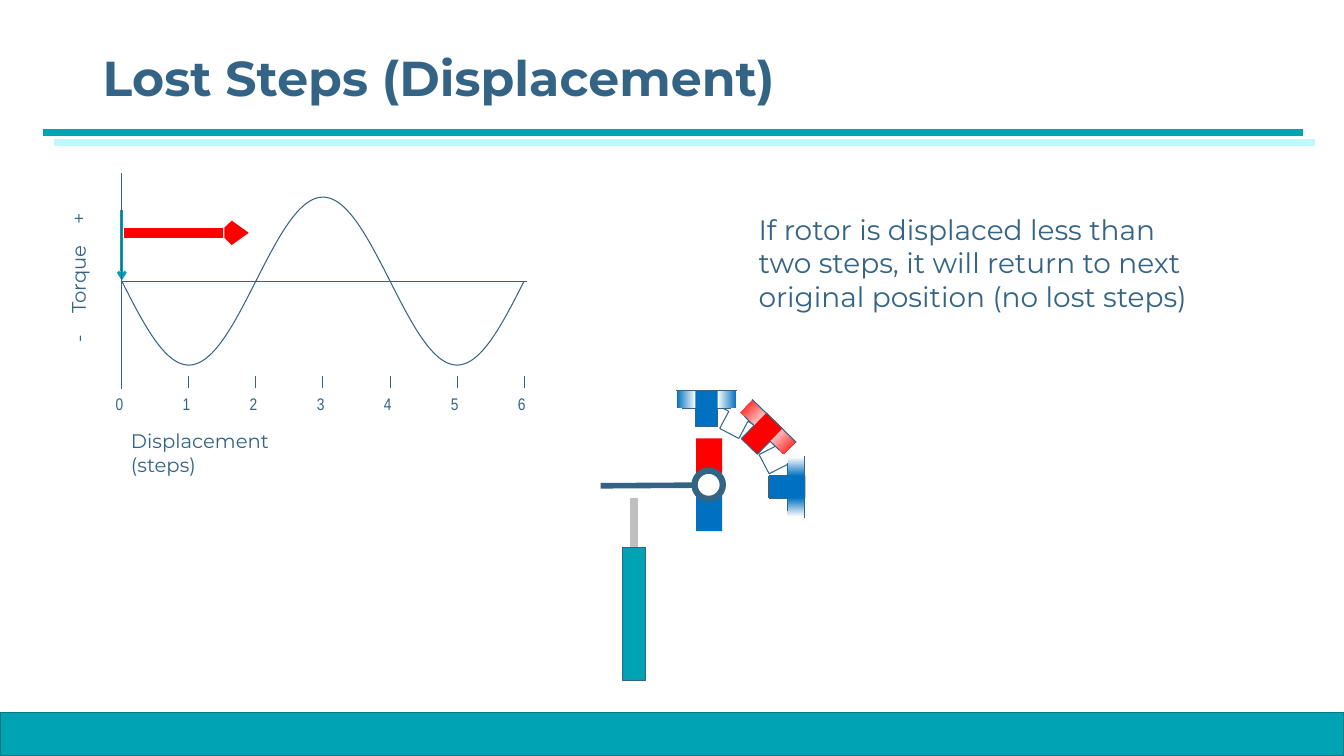
from itertools import pairwise
from math import cos, pi, radians, sin

from lxml.etree import SubElement
from pptx import Presentation
from pptx.dml.color import RGBColor
from pptx.enum.shapes import MSO_CONNECTOR, MSO_SHAPE
from pptx.enum.text import MSO_ANCHOR, MSO_AUTO_SIZE, PP_ALIGN
from pptx.oxml.ns import qn
from pptx.util import Pt

COLORS = {
    "ink": "346485", "teal": "00A3B3", "teal_edge": "007984", "aqua": "BDF9FF",
    "red": "FF0000", "blue": "0070C0", "gray": "BFBFBF", "white": "FFFFFF",
}


def rgb(name):
    """Return the named colour."""
    return RGBColor.from_string(COLORS[name])


def add_line(slide, start, end, color="ink", width=0.75, head=None, shadow=None):
    """Draw a straight line, with an arrowhead size or a shadow on request."""
    line = slide.shapes.add_connector(
        MSO_CONNECTOR.STRAIGHT, *[Pt(value) for value in (*start, *end)])
    line.line.color.rgb = rgb(color)
    line.line.width = Pt(width)
    if head:
        SubElement(line.line._get_or_add_ln(), qn("a:tailEnd"),
                   type="arrow", w=head, len=head)
    effects = SubElement(line._element.spPr, qn("a:effectLst"))
    if shadow:
        cast = SubElement(effects, qn("a:outerShdw"), dist=str(Pt(11)),
                          dir=str(40 * 60000), algn="tl", rotWithShape="0")
        SubElement(cast, qn("a:srgbClr"), val=COLORS[shadow])


def add_block(slide, left, top, width, height, fill, edge=None, edge_width=0.75,
              kind=MSO_SHAPE.RECTANGLE):
    """Draw a filled shape, without an outline unless one is named."""
    block = slide.shapes.add_shape(kind, Pt(left), Pt(top), Pt(width), Pt(height))
    block.shadow.inherit = False
    block.fill.solid()
    block.fill.fore_color.rgb = rgb(fill)
    if edge:
        block.line.color.rgb = rgb(edge)
        block.line.width = Pt(edge_width)
    else:
        block.line.fill.background()
    return block


def add_label(slide, text, left, top, width, height, size, font="Montserrat",
              align=PP_ALIGN.LEFT, anchor=MSO_ANCHOR.TOP, indent=0):
    """Write one paragraph of text in a box."""
    label = slide.shapes.add_textbox(Pt(left), Pt(top), Pt(width), Pt(height))
    frame = label.text_frame
    frame.word_wrap = True
    frame.vertical_anchor = anchor
    frame.margin_left = frame.margin_right = Pt(3.6)
    frame.margin_top = frame.margin_bottom = Pt(3.6)
    paragraph = frame.paragraphs[0]
    paragraph.text = text
    paragraph.alignment = align
    properties = paragraph._p.get_or_add_pPr()
    properties.set("marL", str(Pt(indent)))
    properties.set("indent", "0")
    paragraph.font.size = Pt(size)
    paragraph.font.name = font
    paragraph.font.color.rgb = rgb("ink")
    return label


def add_heading(slide, left, top, width, height):
    """Place the title and the shadowed rule below it."""
    title = slide.shapes.title
    title.left, title.top, title.width, title.height = map(Pt, (left, top, width, height))
    frame = title.text_frame
    frame.text = "Lost Steps (Displacement)"
    frame.vertical_anchor = MSO_ANCHOR.MIDDLE
    frame.auto_size = MSO_AUTO_SIZE.NONE
    paragraph = frame.paragraphs[0]
    paragraph.alignment = PP_ALIGN.LEFT
    paragraph.line_spacing = 0.9
    paragraph.font.size = Pt(35)
    paragraph.font.bold = True
    paragraph.font.name = "Montserrat"
    paragraph.font.color.rgb = rgb("ink")
    rule = top + height + 7.5
    add_line(slide, (left - 35.7, rule), (left + width + 36.7, rule), "teal", 5, shadow="aqua")


def add_torque_curve(slide, left, top, step, height):
    """Draw torque against displacement, with axes, ticks and arrows."""
    zero = top + height / 2
    amplitude = 60
    add_line(slide, (left + 1.5, zero - 34.5), (left + 90.7, zero - 34.5), "red", 7, "sm")
    add_line(slide, (left, zero - 51), (left, zero - 0.5), "teal", 2, "med")
    add_line(slide, (left, zero), (left + 6 * step + 2, zero))
    add_line(slide, (left, top), (left, top + height))
    for count in range(7):
        tick = left + count * step
        if count:
            add_line(slide, (tick, zero + 68), (tick, zero + 76.7))
        add_label(slide, str(count), tick - 10.2, zero + 77, 17, 22, 12,
                  "Arial Narrow", PP_ALIGN.CENTER)
    units = 100
    points = [(units * (left + index * step / 20),
               units * (zero + amplitude * sin(pi * index / 40))) for index in range(121)]
    builder = slide.shapes.build_freeform(*points[0], scale=Pt(1) / units)
    builder.add_line_segments(points[1:], close=False)
    curve = builder.convert_to_shape()
    curve.shadow.inherit = False
    curve.fill.background()
    curve.line.color.rgb = rgb("ink")
    curve.line.width = Pt(0.75)
    for mark, offset in (("-", 41), ("Torque", -1), ("+", -44.6)):
        torque = add_label(slide, mark, left - 66, zero + offset - 12.2, 70, 24.4, 14,
                           align=PP_ALIGN.CENTER)
        torque.rotation = 270
    add_label(slide, "Displacement (steps)", left + 3, zero + 102.2, 130, 42, 14)


def add_pole(slide, x, y, angle, color, fade_inward):
    """Draw a stator pole around its centre, turned by the angle."""
    turn = radians(angle)

    def place(across, along):
        """Turn a point of the pole and move it to the centre."""
        return (x + across * cos(turn) - along * sin(turn),
                y + across * sin(turn) + along * cos(turn))

    def add_part(across, along, width, height, rotation):
        """Draw one block of the pole around its own centre."""
        middle_x, middle_y = place(across, along)
        part = add_block(slide, middle_x - width / 2, middle_y - height / 2,
                         width, height, color)
        part.rotation = rotation % 360
        return part

    for side in (-1, 1):
        facing = angle + (180 if (side < 0) != fade_inward else 0)
        wing = add_part(6.3, side * 14.5, 12.2, 13.7, facing)
        wing.fill.gradient()
        wing.fill.gradient_angle = 270
        for stop, shade in zip(wing.fill.gradient_stops, (color, "white")):
            stop.color.rgb = rgb(shade)
    add_part(0, 0, 26, 16, angle)
    for start, end in (((-13, -8), (-13, 8)), ((-13, -8), (0, -8)), ((-13, 8), (0, 8)),
                       ((0, 8), (0, 17.3)), ((0, -17.3), (0, -8)), ((12.5, -22), (12.5, 22))):
        add_line(slide, place(*start), place(*end))


def add_motor(slide, left, top):
    """Draw the rotor, its arm on a post, and the stator poles."""
    add_line(slide, (left + 22.9, top + 80.7), (left + 22.9, top + 116), "gray", 6)
    add_line(slide, (left - 1, top + 72), (left + 76, top + 71.5), "ink", 4)
    for color, offset in (("red", 38.2), ("blue", 79.2)):
        add_block(slide, left + 67.2, top + offset, 18.7, 25.2, color)
    add_block(slide, left + 66.1, top + 61.2, 20.2, 20.2, "white", "ink", 4.5, MSO_SHAPE.OVAL)
    tooth_chains = (
        ((120.8, 35.3), (125.1, 43.2), (112.2, 49.7), (119.4, 63.4), (132.3, 56.9), (136.6, 64.8)),
        ((81.9, 14.4), (90.6, 18.8), (84.1, 31), (97.8, 38.2), (104.2, 26), (112.2, 30.3)),
    )
    for chain in tooth_chains:
        for start, end in pairwise((left + x, top + y) for x, y in chain):
            add_line(slide, start, end)
    add_block(slide, left + 14.7, top + 116, 16.6, 95, "teal", "ink")
    add_pole(slide, left + 132.3, top + 72.8, 0, "blue", False)
    add_pole(slide, left + 74.7, top + 16.7, 270, "blue", True)
    add_pole(slide, left + 114.3, top + 34.6, 314.1, "red", True)


def main():
    """Build the slide and save it."""
    deck = Presentation()
    deck.slide_width, deck.slide_height = Pt(960), Pt(540)
    slide = deck.slides.add_slide(deck.slide_layouts[5])
    add_block(slide, 0, 509, 960, 31, "teal", "teal_edge", 1)
    add_heading(slide, 66.2, 28.8, 828, 58.3)
    add_label(slide, "If rotor is displaced less than two steps, it will return to next "
              "original position (no lost steps)", 511.2, 131, 342, 113, 20,
              anchor=MSO_ANCHOR.MIDDLE, indent=27)
    add_torque_curve(slide, 87, 123.6, 47.9, 154.4)
    add_motor(slide, 430, 275)
    deck.save("out.pptx")


if __name__ == "__main__":
    main()
